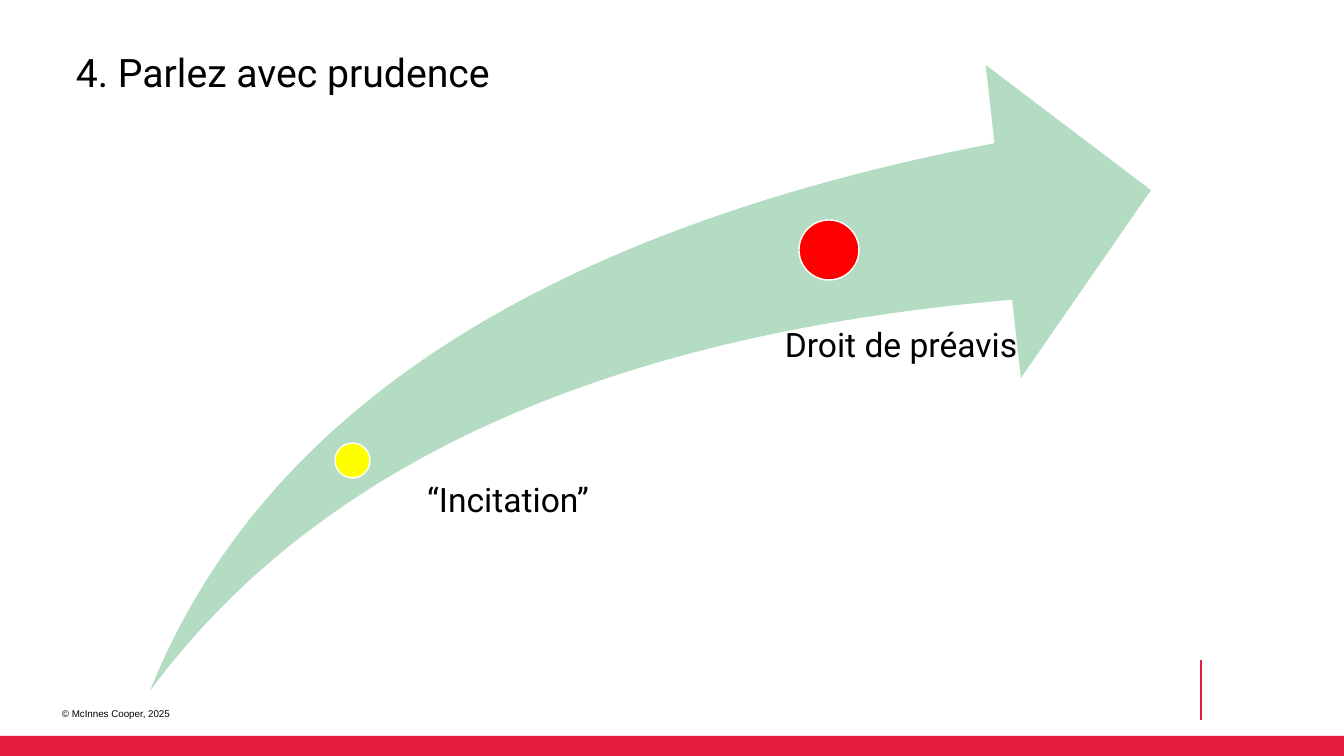
from pptx import Presentation
from pptx.dml.color import RGBColor
from pptx.enum.shapes import MSO_CONNECTOR, MSO_SHAPE
from pptx.enum.text import MSO_ANCHOR, PP_ALIGN
from pptx.oxml.ns import qn
from pptx.util import Pt
from lxml import etree

PX = 914400 / 100.8
BLACK = RGBColor(0, 0, 0)
WHITE = RGBColor(0xFF, 0xFF, 0xFF)
CRIMSON = RGBColor(0xE5, 0x1E, 0x3D)
MINT = RGBColor(0xB3, 0xDC, 0xC3)
YELLOW = RGBColor(0xFF, 0xFF, 0)
RED = RGBColor(0xFF, 0, 0)

# Content: boxes are left, top, width, height in px
SIZE = (1344, 756)
TITLE = ("4. Parlez avec prudence", (66, 40, 1206, 70))
COPYRIGHT = ("© McInnes Cooper, 2025", (52, 703, 131, 22))
FOOTER_BAR = (0, 736, 1344, 20)
FOOTER_RULE = (1201, 660, 1201, 720)
SWOOSH = (150, 65, 1001, 626)
# Milestones: label, label box, left inset, dot colour, dot box
MILESTONES = [
    ("“Incitation”", (346, 483, 306, 209), 18, YELLOW, (335, 443, 35, 35)),
    ("Droit de préavis", (752, 328, 266, 349), 32, RED, (799, 220, 60, 60)),
]


def px(*values):
    return [round(value * PX) for value in values]


def add_filled(kind, box, color, outline=None):
    shape = slide.shapes.add_shape(kind, *px(*box))
    shape.shadow.inherit = False
    shape.fill.solid()
    shape.fill.fore_color.rgb = color
    if outline is None:
        shape.line.fill.background()
    else:
        shape.line.color.rgb = outline
        shape.line.width = Pt(1)
    return shape


def add_text(text, box, size, font="Roboto", spacing=0.9, wrap=True):
    frame = slide.shapes.add_textbox(*px(*box)).text_frame
    frame.word_wrap = wrap
    paragraph = frame.paragraphs[0]
    paragraph.text = text
    paragraph.line_spacing = spacing
    paragraph.font.name = font
    paragraph.font.size = Pt(size)
    paragraph.font.color.rgb = BLACK
    return frame


presentation = Presentation()
presentation.slide_width, presentation.slide_height = px(*SIZE)
slide = presentation.slides.add_slide(presentation.slide_layouts[6])

# Footer
add_filled(MSO_SHAPE.RECTANGLE, FOOTER_BAR, CRIMSON)
add_text(*COPYRIGHT, 7, font="Arial", spacing=1.0, wrap=False)
rule = slide.shapes.add_connector(MSO_CONNECTOR.STRAIGHT, *px(*FOOTER_RULE))
rule.line.color.rgb = CRIMSON
rule.line.width = Pt(1)
etree.SubElement(rule._element.spPr, qn("a:effectLst"))

# Title
add_text(*TITLE, 28).vertical_anchor = MSO_ANCHOR.MIDDLE

# Rising arrow with its milestones
swoosh = add_filled(MSO_SHAPE.SWOOSH_ARROW, SWOOSH, MINT)
swoosh.adjustments[0] = swoosh.adjustments[1] = 0.25
for label, label_box, inset, color, dot_box in MILESTONES:
    add_filled(MSO_SHAPE.OVAL, dot_box, color, WHITE)
    frame = add_text(label, label_box, 24)
    frame.margin_left = px(inset)[0]
    frame.margin_top = frame.margin_right = frame.margin_bottom = 0
    frame.paragraphs[0].alignment = PP_ALIGN.CENTER

presentation.save("out.pptx")
